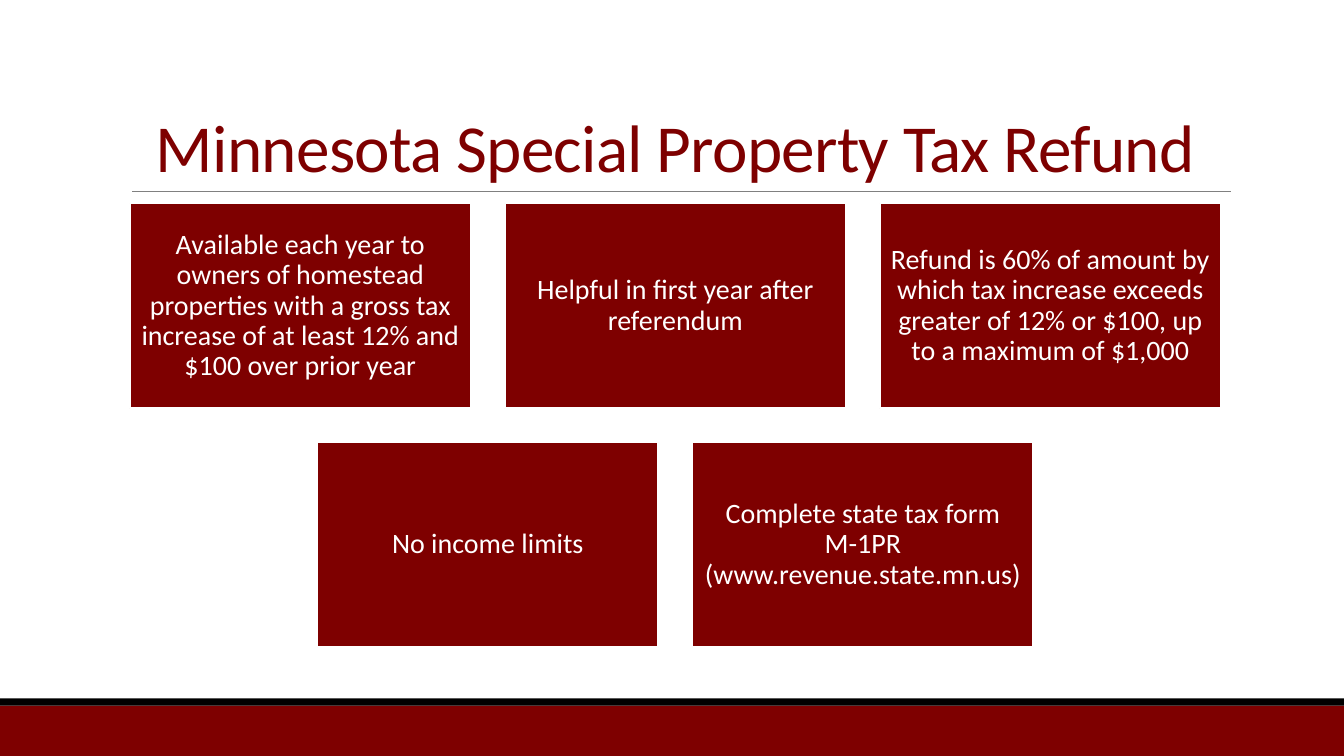
"""Build the slide on the Minnesota special property tax refund."""
import lxml.etree
import pptx
import pptx.dml.color
import pptx.enum.shapes
import pptx.enum.text
import pptx.oxml.ns
import pptx.util

Cm = pptx.util.Cm
Pt = pptx.util.Pt
RGB = pptx.dml.color.RGBColor.from_string
ALIGN = pptx.enum.text.PP_ALIGN
ANCHOR = pptx.enum.text.MSO_ANCHOR

TITLE = "Minnesota Special Property Tax Refund"
ROWS = [
    [
        "Available each year to owners of homestead properties with a gross "
        "tax increase of at least 12% and $100 over prior year",
        "Helpful in first year after referendum",
        "Refund is 60% of amount by which tax increase exceeds greater of "
        "12% or $100, up to a maximum of $1,000",
    ],
    [
        "No income limits",
        "Complete state tax form M-1PR (www.revenue.state.mn.us)",
    ],
]

THEME = {
    "red": RGB("7E0000"),
    "black": RGB("000000"),
    "white": RGB("FFFFFF"),
    "gray": RGB("808080"),
    "font": "Calibri",
    "title": Pt(48),
    "body": Pt(20),
}

WIDE, HIGH = 33.87, 19.05
BANDS = [("red", 17.78, 1.27), ("black", 17.6, 0.18)]
RULE = (3.33, 31.01, 4.83)
HEAD = (3.05, 0.79, 27.94, 4.04)
BOX_W, BOX_H, GAP = 8.59, 5.16, 0.86
MID, TOP = 17.02, 5.13
INSET = Cm(0.2)


def apply(item, form):
    for name, value in form.items():
        setattr(item, name, value)


def block(slide, area, fill):
    kind = pptx.enum.shapes.MSO_SHAPE.RECTANGLE
    shape = slide.shapes.add_shape(kind, *map(Cm, area))
    shape.shadow.inherit = False
    shape.fill.solid()
    shape.fill.fore_color.rgb = THEME[fill]
    shape.line.fill.background()
    return shape


def write(shape, text, size, color, frame, para):
    apply(shape.text_frame, {"word_wrap": True, **frame})
    line = shape.text_frame.paragraphs[0]
    apply(line, {"alignment": ALIGN.CENTER, **para})
    run = line.add_run()
    run.text = text
    apply(run.font, {"name": THEME["font"], "size": THEME[size]})
    run.font.color.rgb = THEME[color]
    return run


def draw_frame(slide):
    for fill, top, high in BANDS:
        block(slide, (0, top, WIDE, high), fill)
    left, right, y = map(Cm, RULE)
    kind = pptx.enum.shapes.MSO_CONNECTOR.STRAIGHT
    rule = slide.shapes.add_connector(kind, left, y, right, y)
    rule.line.color.rgb = THEME["gray"]
    rule.line.width = Pt(0.5)
    props = rule._element.spPr
    lxml.etree.SubElement(props, pptx.oxml.ns.qn("a:effectLst"))
    head = slide.shapes.add_textbox(*map(Cm, HEAD))
    run = write(head, TITLE, "title", "red",
                {"vertical_anchor": ANCHOR.BOTTOM}, {"line_spacing": 0.85})
    run._r.get_or_add_rPr().set("spc", "-50")


def draw_boxes(slide):
    sides = ("left", "top", "right", "bottom")
    frame = {f"margin_{side}": INSET for side in sides}
    frame["vertical_anchor"] = ANCHOR.MIDDLE
    for row, texts in enumerate(ROWS):
        span = len(texts) * (BOX_W + GAP) - GAP
        y = TOP + row * (BOX_H + GAP)
        for col, text in enumerate(texts):
            x = MID - span / 2 + col * (BOX_W + GAP)
            box = block(slide, (x, y, BOX_W, BOX_H), "red")
            box.line.color.rgb = THEME["white"]
            box.line.width = Pt(1.25)
            write(box, text, "body", "white", frame, {"line_spacing": 0.9})


def main():
    deck = pptx.Presentation()
    apply(deck, {"slide_width": Cm(WIDE), "slide_height": Cm(HIGH)})
    slide = deck.slides.add_slide(deck.slide_layouts[6])
    draw_frame(slide)
    draw_boxes(slide)
    deck.save("out.pptx")


if __name__ == "__main__":
    main()
